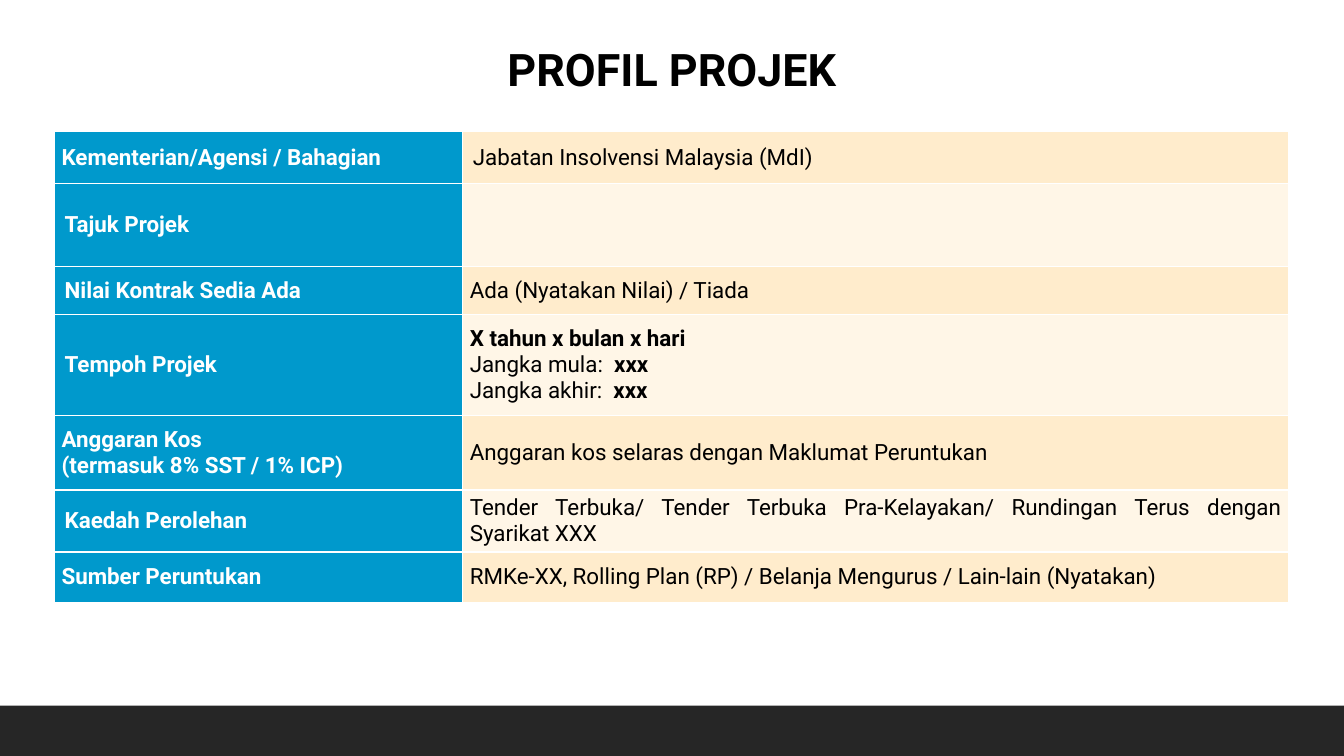
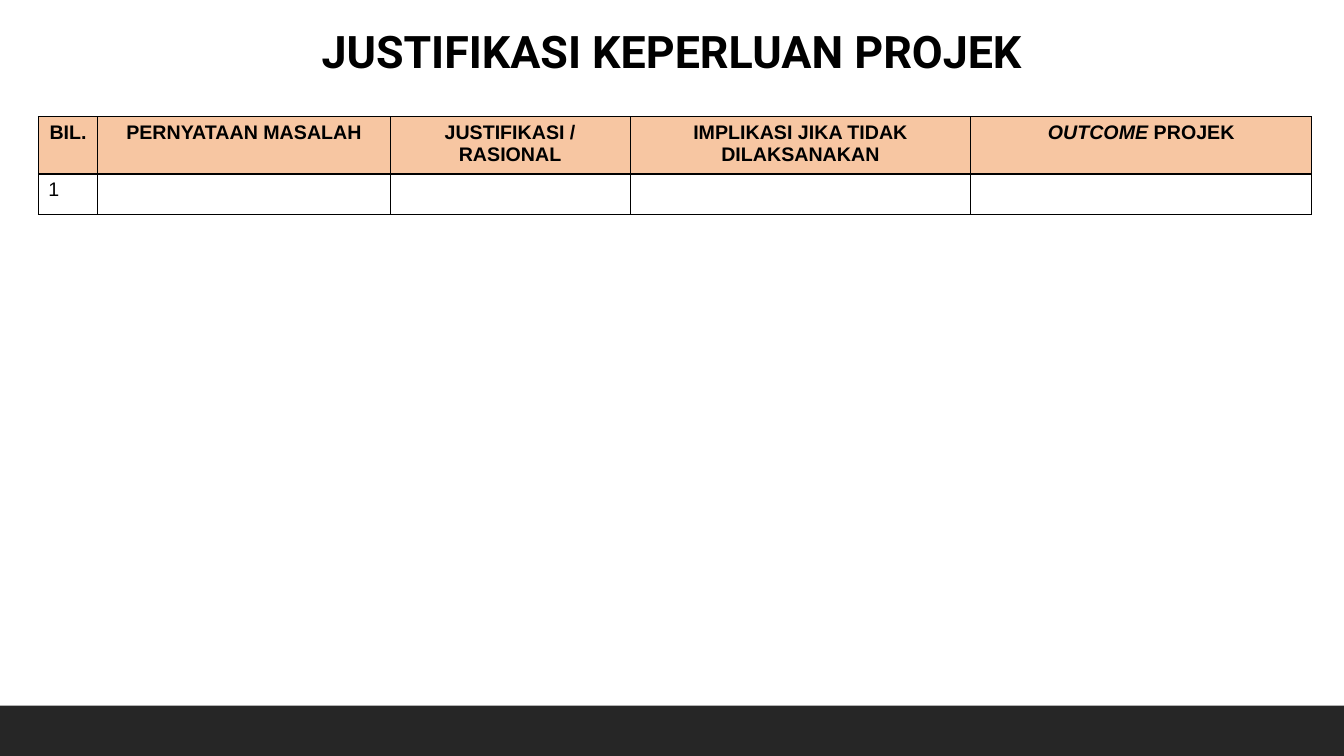
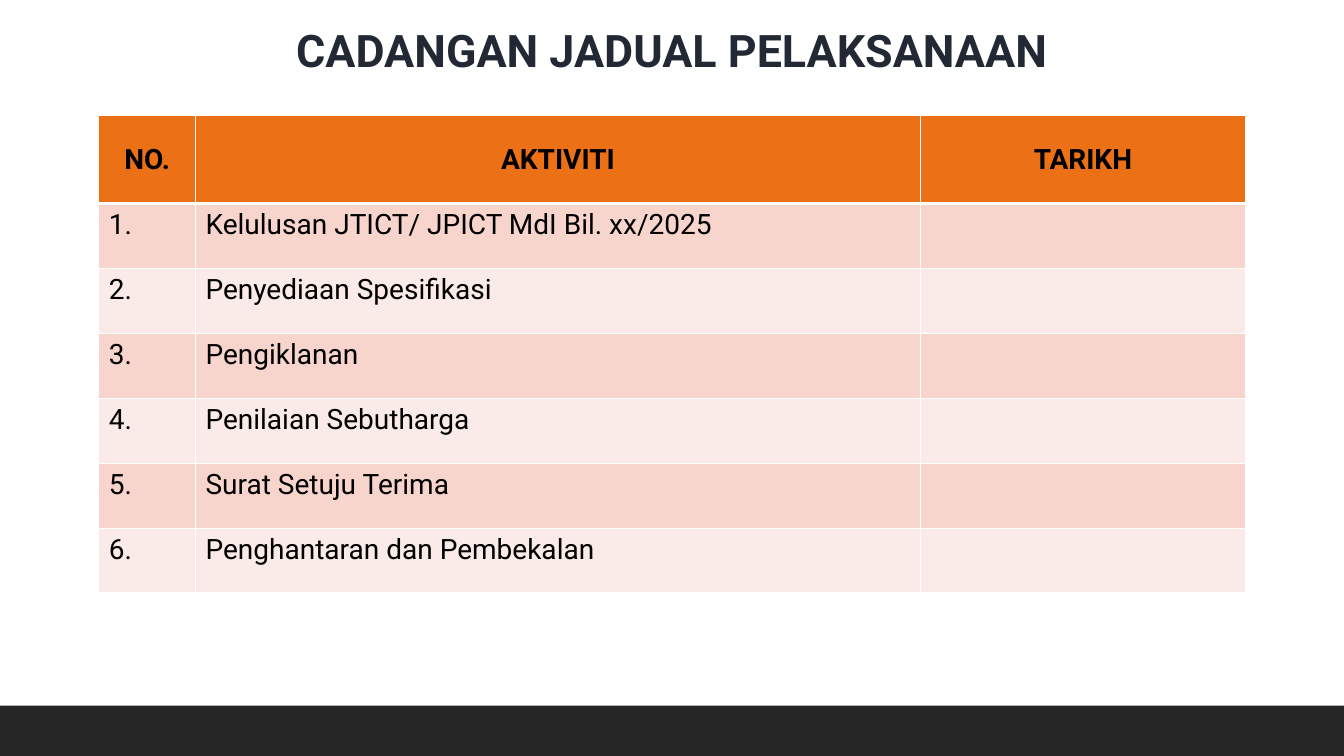
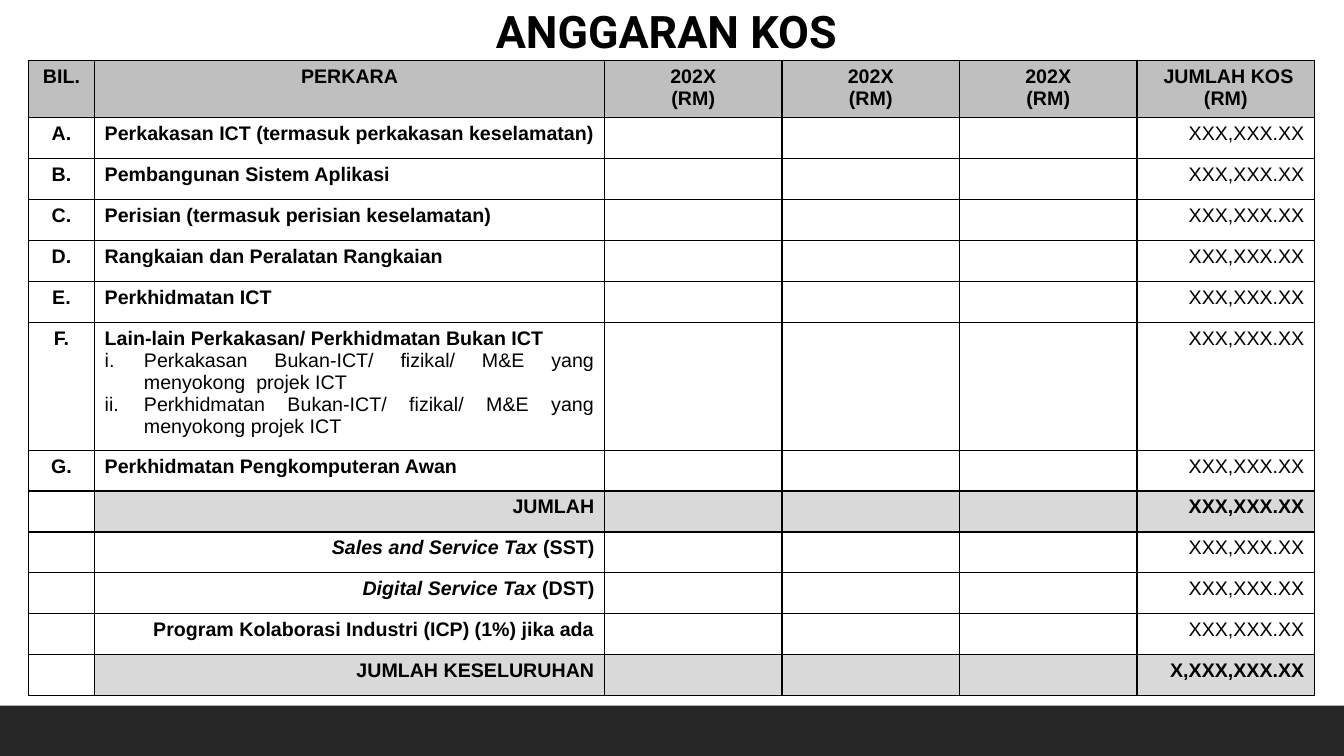
import lxml.etree
import pptx
import pptx.dml.color
import pptx.enum.shapes
import pptx.enum.text
import pptx.oxml.ns
import pptx.util

Pt = pptx.util.Pt
qn = pptx.oxml.ns.qn
Align = pptx.enum.text.PP_ALIGN
Anchor = pptx.enum.text.MSO_ANCHOR
RGB = pptx.dml.color.RGBColor.from_string

hues = {
    "black": "000000", "white": "FFFFFF", "navy": "222935", "band": "262626",
    "blue": "0099CC", "cream": "FFECCC", "ivory": "FFF6E7", "peach": "F7C6A2",
    "orange": "EC7016", "rose": "F8D5CC", "blush": "FBEBE8",
    "grey": "BFBFBF", "silver": "D9D9D9",
}
sides = {"left": Align.LEFT, "mid": Align.CENTER, "right": Align.RIGHT, "full": Align.JUSTIFY}
head = {"name": "Roboto", "size": Pt(32), "bold": True}
label = {"name": "Roboto", "size": Pt(16), "bold": True}
value = {**label, "bold": False}
strong = {"name": "Arial", "size": Pt(14), "bold": True}
plain = {**strong, "bold": False}
step = {"name": "Roboto", "size": Pt(20), "bold": False}
wide, high = 960, 540


def write(frame, text, form, side="left", hue="black", flip="bold"):
    for num, line in enumerate(text.split("\n")):
        para = frame.add_paragraph() if num else frame.paragraphs[0]
        para.alignment = sides[side]
        for turn, part in enumerate(line.split("|")):
            if not part:
                continue
            run = para.add_run()
            run.text = part
            look = {**form, flip: form.get(flip, False) != (turn % 2 == 1)}
            for key, val in look.items():
                setattr(run.font, key, val)
            run.font.color.rgb = RGB(hues[hue])


def grid(page, left, top, cols, rows, edge, fills, rule=1):
    frame = page.shapes.add_table(
        len(rows), len(cols), Pt(left), Pt(top), Pt(sum(cols)), Pt(sum(rows)))
    table = frame.table
    table.first_row = table.horz_banding = False
    for col, size in zip(table.columns, cols):
        col.width = Pt(size)
    for num, (row, size) in enumerate(zip(table.rows, rows)):
        row.height = Pt(size)
        for col, cell in enumerate(row.cells):
            props = cell._tc.get_or_add_tcPr()
            for tag in ("lnL", "lnR", "lnT", "lnB"):
                thick = rule if (num, tag) in ((0, "lnB"), (1, "lnT")) else 1
                line = lxml.etree.SubElement(props, qn("a:" + tag), w=str(Pt(thick)))
                solid = lxml.etree.SubElement(line, qn("a:solidFill"))
                lxml.etree.SubElement(solid, qn("a:srgbClr"), val=hues[edge])
            fill = fills(num, col)
            if fill:
                cell.fill.solid()
                cell.fill.fore_color.rgb = RGB(hues[fill])
            else:
                cell.fill.background()
    return table


deck = pptx.Presentation()
deck.slide_width, deck.slide_height = Pt(wide), Pt(high)
blank = deck.slide_layouts[6]
pages = []
for text, top, tall, hue in (
    ("PROFIL PROJEK", 26, 48, "black"),
    ("JUSTIFIKASI KEPERLUAN PROJEK", 13.7, 44, "black"),
    ("CADANGAN JADUAL PELAKSANAAN", 16.6, 41.8, "navy"),
    ("ANGGARAN KOS ", -0.7, 44, "black"),
):
    page = deck.slides.add_slide(blank)
    frame = page.shapes.add_textbox(0, Pt(top), Pt(wide), Pt(tall)).text_frame
    frame.word_wrap = True
    write(frame, text, head, "mid", hue)
    if hue == "navy":
        frame.vertical_anchor = Anchor.MIDDLE
        frame.paragraphs[0].line_spacing = 0.9
    pages.append(page)
profile, reason, plan, cost = pages

band = profile.shapes.add_shape(
    pptx.enum.shapes.MSO_SHAPE.RECTANGLE, 0, Pt(504), Pt(wide), Pt(36))
band.shadow.inherit = False
band.fill.solid()
band.fill.fore_color.rgb = RGB(hues["band"])
band.line.fill.background()
blank.shapes.element.append(band.element)

tight, snug, loose = (5, 0), (5, 3), (7.2, 3.6)
facts = (
    ("Kementerian/Agensi / Bahagian", tight, "Jabatan Insolvensi Malaysia (MdI)", loose, 37),
    ("Tajuk Projek", loose, "", loose, 59.5),
    ("Nilai Kontrak Sedia Ada", loose, "Ada (Nyatakan Nilai) / Tiada", snug, 34),
    ("Tempoh Projek", loose,
     "|X tahun x bulan x hari|\nJangka mula:  |xxx|\nJangka akhir:  |xxx|", snug, 72.5),
    ("Anggaran Kos\n(termasuk 8% SST / 1% ICP)", tight,
     "Anggaran kos selaras dengan Maklumat Peruntukan", snug, 53),
    ("Kaedah Perolehan", loose,
     "Tender Terbuka/ Tender Terbuka Pra-Kelayakan/ Rundingan Terus dengan Syarikat XXX",
     snug, 42.5),
    ("Sumber Peruntukan", tight,
     "RMKe-XX, Rolling Plan (RP) / Belanja Mengurus / Lain-lain (Nyatakan)", snug, 36),
)
table = grid(profile, 39, 94, (291.6, 590), [fact[-1] for fact in facts], "white",
             lambda row, col: ("cream", "ivory")[row % 2] if col else "blue")
for num, (name, inset, text, pad, tall) in enumerate(facts):
    side = "full" if name == "Kaedah Perolehan" else "left"
    for col, (words, gap, form, hue, way) in enumerate((
        (name, inset, label, "white", "left"),
        (text, pad, value, "black", side),
    )):
        cell = table.cell(num, col)
        cell.vertical_anchor = Anchor.MIDDLE
        cell.margin_left = cell.margin_right = Pt(gap[0])
        cell.margin_top = cell.margin_bottom = Pt(gap[1])
        write(cell.text_frame, words, form, way, hue)

table = grid(reason, 27.4, 83.4, (42.5, 208.8, 171.4, 243.4, 243.4), (38.6, 29.2), "black",
             lambda row, col: None if row else "peach")
for col, text in enumerate((
    "BIL.", "PERNYATAAN MASALAH", "JUSTIFIKASI / RASIONAL",
    "IMPLIKASI JIKA TIDAK DILAKSANAKAN", "|OUTCOME| PROJEK",
)):
    write(table.cell(0, col).text_frame, text, strong, "mid", flip="italic")
write(table.cell(1, 0).text_frame, "1", plain)

steps = (
    "Kelulusan JTICT/ JPICT MdI Bil. xx/2025", "Penyediaan Spesifikasi", "Pengiklanan",
    "Penilaian Sebutharga", "Surat Setuju Terima", "Penghantaran dan Pembekalan",
)
table = grid(plan, 70.6, 82.4, (69, 518, 232), [63] + [46.4] * len(steps), "white",
             lambda row, col: ("blush", "rose")[row % 2] if row else "orange", 3)
for col, text in enumerate(("NO.", "AKTIVITI", "TARIKH")):
    cell = table.cell(0, col)
    cell.vertical_anchor = Anchor.MIDDLE
    write(cell.text_frame, text, {**step, "bold": True}, "mid")
for num, text in enumerate(steps, 1):
    write(table.cell(num, 0).text_frame, f"{num}.", step)
    write(table.cell(num, 1).text_frame, text, step)

items = (
    "Perkakasan ICT (termasuk perkakasan keselamatan)",
    "Pembangunan Sistem Aplikasi",
    "Perisian (termasuk perisian keselamatan)",
    "Rangkaian dan Peralatan Rangkaian",
    "Perkhidmatan ICT",
    "Lain-lain Perkakasan/ Perkhidmatan Bukan ICT\n"
    "|Perkakasan Bukan-ICT/ fizikal/ M&E yang menyokong  projek ICT|\n"
    "|Perkhidmatan Bukan-ICT/ fizikal/ M&E yang menyokong projek ICT|",
    "Perkhidmatan Pengkomputeran Awan",
)
sums = (
    "JUMLAH", "|Sales and Service Tax |(SST)", "|Digital Service Tax |(DST)",
    "Program Kolaborasi Industri (ICP) (1%) jika ada", "JUMLAH KESELURUHAN",
)
first, last = len(items) + 1, len(items) + len(sums)
totals = (first, last)
rows = [41] + [91.4 if "\n" in item else 29.2 for item in items] + [29.2] * len(sums)
table = grid(cost, 20.2, 43.2, [47.4, 364.2] + [126.8] * 4, rows, "black",
             lambda row, col: "grey" if row == 0 else "silver" if col and row in totals else None)
for col, text in enumerate(["BIL.", "PERKARA"] + ["202X\n(RM)"] * 3 + [" JUMLAH KOS (RM)"]):
    write(table.cell(0, col).text_frame, text, strong, "mid")
for num, text in enumerate(items, 1):
    write(table.cell(num, 0).text_frame, "ABCDEFG"[num - 1] + ".", strong, "mid")
    frame = table.cell(num, 1).text_frame
    write(frame, text, strong, "full" if "\n" in text else "left")
    for para in frame.paragraphs[1:]:
        props = para._p.get_or_add_pPr()
        props.set("marL", str(Pt(28)))
        props.set("indent", str(Pt(-28)))
        lxml.etree.SubElement(props, qn("a:buFont"), typeface="+mj-lt")
        lxml.etree.SubElement(props, qn("a:buAutoNum"), type="romanLcPeriod")
for num, text in enumerate(sums, first):
    write(table.cell(num, 1).text_frame, text, strong, "right", flip="italic")
for num in range(1, last + 1):
    text = "X,XXX,XXX.XX" if num == last else "XXX,XXX.XX"
    write(table.cell(num, 5).text_frame, text, strong if num in totals else plain, "right")

deck.save("out.pptx")
